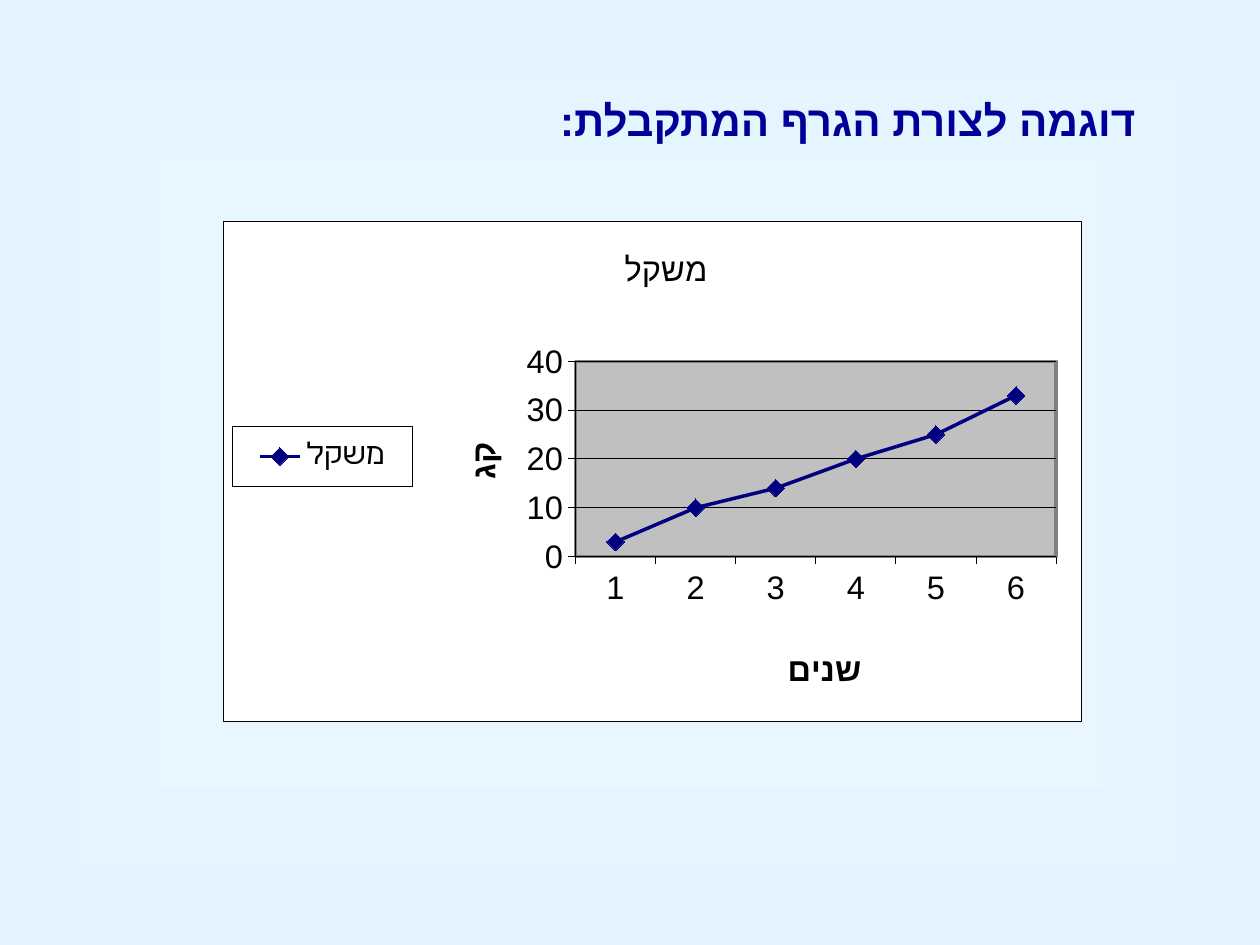
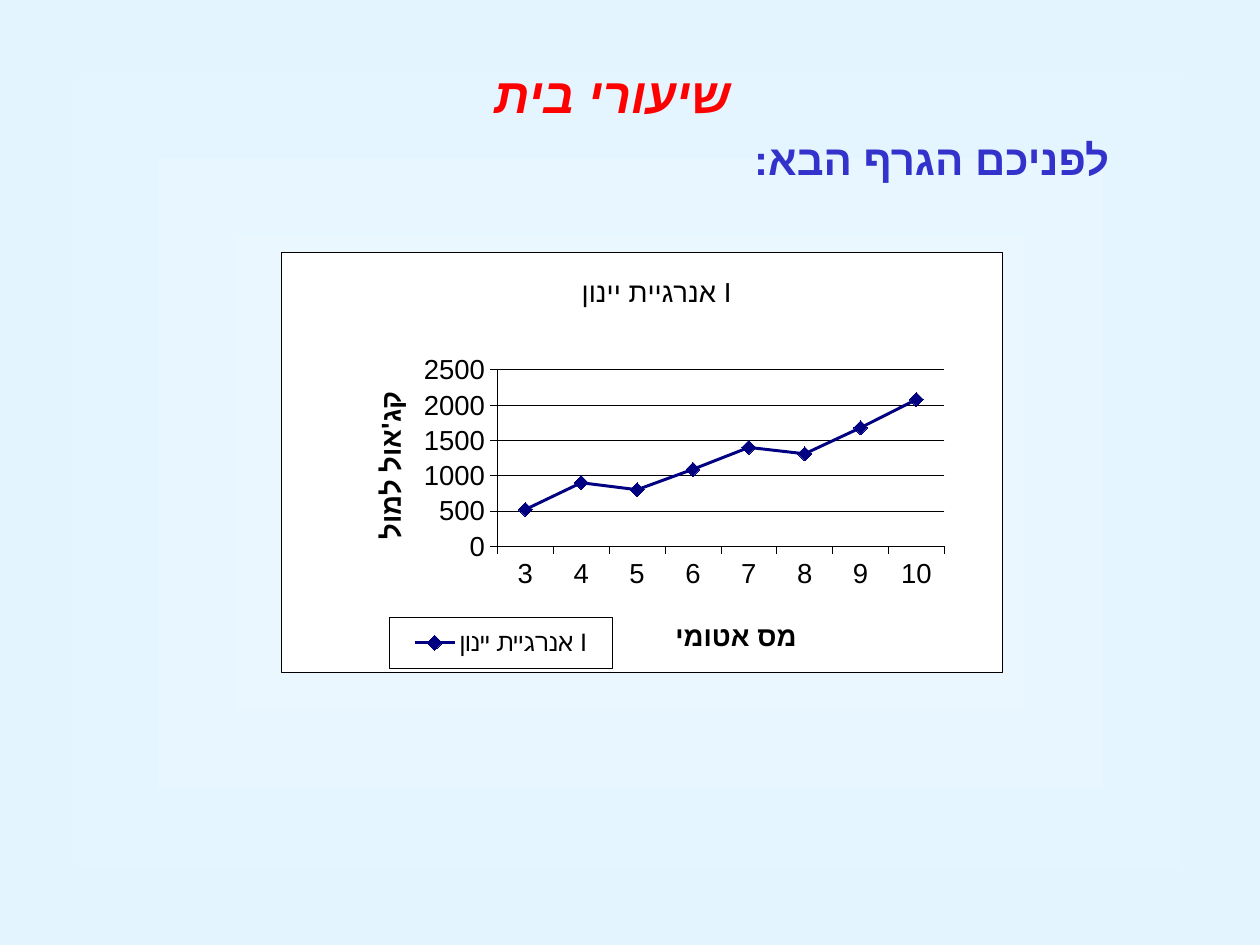
from lxml import etree
from pptx import Presentation
from pptx.chart.data import CategoryChartData
from pptx.dml.color import RGBColor
from pptx.enum.chart import XL_CHART_TYPE as ChartType
from pptx.enum.chart import XL_LEGEND_POSITION as LegendSide
from pptx.enum.chart import XL_MARKER_STYLE as MarkerStyle
from pptx.enum.chart import XL_TICK_MARK as TickMark
from pptx.enum.text import MSO_ANCHOR as Anchor
from pptx.enum.text import MSO_AUTO_SIZE as AutoSize
from pptx.enum.text import PP_ALIGN as Align
from pptx.oxml import parse_xml
from pptx.oxml.ns import nsdecls, qn
from pptx.util import Cm, Pt

FONT = "Arial"
BLACK = RGBColor(0x00, 0x00, 0x00)
WHITE = RGBColor(0xFF, 0xFF, 0xFF)
SILVER = RGBColor(0xC0, 0xC0, 0xC0)
GREY = RGBColor(0x80, 0x80, 0x80)
NAVY = RGBColor(0x00, 0x00, 0x80)
DEEP_BLUE = RGBColor(0x00, 0x00, 0x99)
BLUE = RGBColor(0x33, 0x33, 0xCC)
RED = RGBColor(0xFF, 0x00, 0x00)
SKY_CENTRE = RGBColor(0xEF, 0xF9, 0xFF)
SKY_EDGE = RGBColor(0xE3, 0xF4, 0xFF)


def place(element, x, y, width=None, height=None, inner=False):
    for old in element.findall(qn("c:layout")):
        element.remove(old)
    layout = etree.Element(qn("c:layout"))
    manual = etree.SubElement(layout, qn("c:manualLayout"))
    settings = {"layoutTarget": "inner" if inner else None, "xMode": "edge", "yMode": "edge",
                "x": x, "y": y, "w": width, "h": height}
    for name, value in settings.items():
        if value is not None:
            etree.SubElement(manual, qn(f"c:{name}")).set("val", str(value))
    leading = [child for child in element if child.tag in (qn("c:tx"), qn("c:legendPos"))]
    element.insert(len(leading), layout)


def frame(fill, line, points):
    paint = f'<a:solidFill><a:srgbClr val="{fill}"/></a:solidFill>' if fill else "<a:noFill/>"
    stroke = f'<a:solidFill><a:srgbClr val="{line}"/></a:solidFill>' if line else "<a:noFill/>"
    return parse_xml(f'<c:spPr {nsdecls("c", "a")}>{paint}'
                     f'<a:ln w="{Pt(points)}">{stroke}</a:ln></c:spPr>')


slides = [
    {
        "texts": [
            {"text": "דוגמה לצורת הגרף המתקבלת:", "at": (10.44, 1.78, 12.7, 1.27),
             "align": Align.RIGHT, "inset": 0,
             "font": {"size": Pt(24), "bold": True, "italic": False}, "colour": DEEP_BLUE},
        ],
        "at": (4.5, 4.45, 17.32, 10.11),
        "name": "משקל", "across": "שנים", "up": "קג",
        "first": 1, "values": (3, 10, 14, 20, 25, 33), "top": 40, "step": 10,
        "size": 18.6, "legend_size": 17.1, "hairline": 0.5, "line": 2.02, "marker": 10,
        "side": LegendSide.LEFT, "plot_fill": SILVER, "plot_line": GREY,
        "plot": (0.41, 0.28, 0.56, 0.39), "legend": (0.01, 0.41, 0.21, 0.12),
        "title_at": (0.46, 0.04), "across_at": (0.65, 0.84), "up_at": (0.27, 0.43),
    },
    {
        "texts": [
            {"text": "שיעורי בית", "at": (8.84, 1.17, 7.01, 1.45),
             "align": Align.CENTER, "inset": 0.25,
             "font": {"size": Pt(28), "bold": True, "italic": True}, "colour": RED},
            {"text": "לפניכם הגרף הבא:", "at": (14.38, 2.57, 8.23, 1.27),
             "align": Align.RIGHT, "inset": 0,
             "font": {"size": Pt(24), "bold": True, "italic": False}, "colour": BLUE},
        ],
        "at": (5.66, 5.08, 14.55, 8.48),
        "name": "אנרגיית יינון I", "across": "מס אטומי", "up": "קג'אול למול",
        "first": 3, "values": (520, 900, 800, 1090, 1400, 1310, 1680, 2080),
        "top": 2500, "step": 500,
        "size": 15.7, "legend_size": 14.4, "hairline": 0.42, "line": 1.7, "marker": 8,
        "side": LegendSide.RIGHT, "plot_fill": None, "plot_line": None,
        "plot": (0.3, 0.28, 0.62, 0.42), "legend": (0.15, 0.87, 0.31, 0.12),
        "title_at": (0.41, 0.04), "across_at": (0.54, 0.86), "up_at": (0.12, 0.32),
    },
]

deck = Presentation()
deck.slide_width, deck.slide_height = Cm(25.4), Cm(19.05)

sky = deck.slide_master.background.fill
sky.gradient()
for stop, colour in zip(sky.gradient_stops, (SKY_CENTRE, SKY_EDGE)):
    stop.color.rgb = colour
for linear in list(deck.slide_master.element.iter(qn("a:lin"))):
    linear.getparent().replace(linear, parse_xml(
        f'<a:path {nsdecls("a")} path="shape">'
        '<a:fillToRect l="50000" t="50000" r="50000" b="50000"/></a:path>'))

for slide in slides:
    page = deck.slides.add_slide(deck.slide_layouts[5])
    for index, item in enumerate(slide["texts"]):
        area = [Cm(length) for length in item["at"]]
        box = page.shapes.add_textbox(*area) if index else page.shapes.title
        box.left, box.top, box.width, box.height = area
        body = box.text_frame
        settings = {"word_wrap": True, "auto_size": AutoSize.SHAPE_TO_FIT_TEXT,
                    "vertical_anchor": Anchor.TOP, "margin_left": Cm(item["inset"]),
                    "margin_right": Cm(0.25), "margin_top": Cm(0.13), "margin_bottom": Cm(0.13)}
        for name, value in settings.items():
            setattr(body, name, value)
        para = body.paragraphs[0]
        para.alignment = item["align"]
        para._p.get_or_add_pPr().set("rtl", "1")
        span = para.add_run()
        span.text = item["text"]
        for name, value in {"name": FONT, **item["font"]}.items():
            setattr(span.font, name, value)
        span.font.color.rgb = item["colour"]
        etree.SubElement(span._r.get_or_add_rPr(), qn("a:cs")).set("typeface", FONT)

    data = CategoryChartData()
    data.categories = [str(slide["first"] + i) for i in range(len(slide["values"]))]
    data.add_series(slide["name"], slide["values"])
    chart = page.shapes.add_chart(ChartType.LINE_MARKERS,
                                  *[Cm(length) for length in slide["at"]], data).chart
    chart.font.name = FONT
    chart.font.size = Pt(slide["size"])
    chart.font.color.rgb = BLACK
    chart.has_title = True
    chart.has_legend = True
    chart.plots[0].vary_by_categories = False

    across, up = chart.category_axis, chart.value_axis
    for name, value in {"minimum_scale": 0, "maximum_scale": slide["top"],
                        "major_unit": slide["step"], "has_major_gridlines": True}.items():
        setattr(up, name, value)
    for axis in (across, up):
        axis.major_tick_mark = TickMark.OUTSIDE
        axis.minor_tick_mark = TickMark.NONE
    for line in (across.format.line, up.format.line, up.major_gridlines.format.line):
        line.color.rgb = BLACK
        line.width = Pt(slide["hairline"])

    headings = [
        (chart.chart_title, slide["name"], slide["title_at"], False),
        (across.axis_title, slide["across"], slide["across_at"], True),
        (up.axis_title, slide["up"], slide["up_at"], True),
    ]
    for heading, text, spot, bold in headings:
        span = heading.text_frame.paragraphs[0].add_run()
        span.text = text
        for name, value in {"name": FONT, "size": Pt(slide["size"]), "bold": bold}.items():
            setattr(span.font, name, value)
        span.font.color.rgb = BLACK
        etree.SubElement(span._r.get_or_add_rPr(), qn("a:cs")).set("typeface", FONT)
        place(heading._element, *spot)
    turned = up.axis_title._element.find(".//" + qn("a:bodyPr"))
    turned.set("rot", "-5400000")
    turned.set("vert", "horz")

    series = chart.plots[0].series[0]
    series.smooth = False
    series.format.line.color.rgb = NAVY
    series.format.line.width = Pt(slide["line"])
    series.marker.style = MarkerStyle.DIAMOND
    series.marker.size = slide["marker"]
    series.marker.format.fill.solid()
    series.marker.format.fill.fore_color.rgb = NAVY
    series.marker.format.line.color.rgb = NAVY

    legend = chart.legend
    legend.position = slide["side"]
    legend.include_in_layout = False
    legend.font.name = FONT
    legend.font.size = Pt(slide["legend_size"])
    legend.font.color.rgb = BLACK
    place(legend._element, *slide["legend"])
    legend._element.find(qn("c:overlay")).addnext(frame(WHITE, BLACK, slide["hairline"]))

    space = chart._chartSpace
    for old in space.findall(qn("c:roundedCorners")):
        space.remove(old)
    corners = etree.Element(qn("c:roundedCorners"))
    corners.set("val", "0")
    space.find(qn("c:date1904")).addnext(corners)
    space.find(qn("c:chart")).addnext(frame(WHITE, BLACK, slide["hairline"]))
    plot_area = space.find(".//" + qn("c:plotArea"))
    place(plot_area, *slide["plot"], inner=True)
    plot_area.append(frame(slide["plot_fill"], slide["plot_line"], 2))

deck.save("out.pptx")
